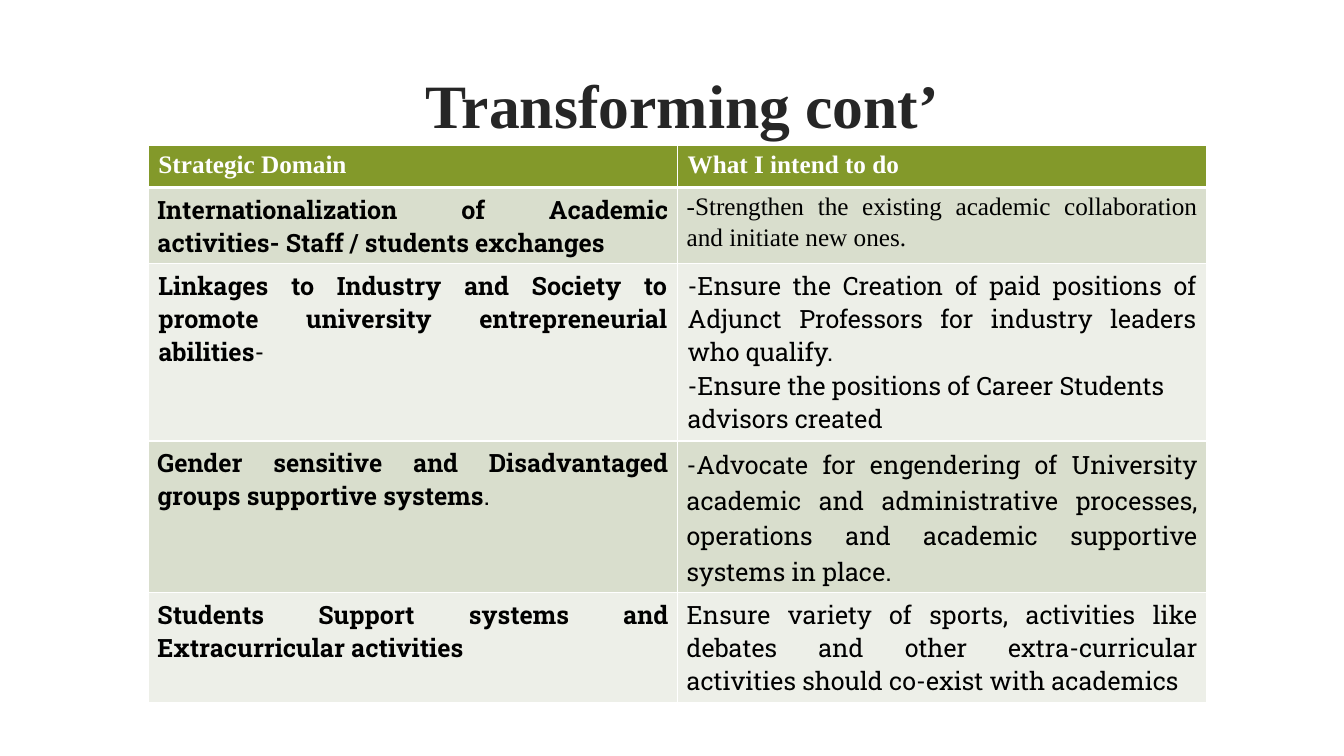
from lxml import etree
from pptx import Presentation
from pptx.dml.color import RGBColor
from pptx.enum.text import MSO_ANCHOR, PP_ALIGN
from pptx.oxml.ns import qn
from pptx.util import Pt

LEFT, CENTER, JUSTIFY = PP_ALIGN.LEFT, PP_ALIGN.CENTER, PP_ALIGN.JUSTIFY
MIDDLE = MSO_ANCHOR.MIDDLE
SERIF, SLAB = "Times New Roman", "Roboto Slab"
WHITE, BLACK, TITLE_COLOR = "FFFFFF", "000000", "262626"
HEADER_FILL, BANDS = "83992A", ("D9DECD", "EDEFE8")

TITLE = "Transforming cont’"
HEADERS = ("Strategic Domain", "What I intend to do")
# Bold domain, its plain ending, font of the actions, actions as (text, alignment)
DOMAINS = [
    ("Internationalization of Academic activities- Staff / students exchanges", "", SERIF,
     [("-Strengthen the existing academic collaboration and initiate new ones.", JUSTIFY)]),
    ("Linkages to Industry and Society to promote university entrepreneurial abilities", "- ", SLAB,
     [("-Ensure the Creation of paid positions of Adjunct Professors for industry leaders "
       "who qualify.", JUSTIFY),
      ("-Ensure the positions of Career Students advisors created", LEFT)]),
    ("Gender sensitive and Disadvantaged groups supportive systems", ". ", SLAB,
     [("-Advocate for engendering of University academic and administrative processes, "
       "operations and academic supportive systems in place.", JUSTIFY)]),
    ("Students Support systems and Extracurricular activities", "", SLAB,
     [("Ensure variety of sports, activities like debates and other extra-curricular "
       "activities should co-exist with academics", JUSTIFY)]),
]
ROW_HEIGHTS = (30, 54.5, 126.5, 108.5, 78.5)
SIDE_MARGINS = (7.2, 6.5, 7.2, 6.5, 6.5)
COL_WIDTH = 378
LOOSE_ROW = 3


def rgb(value):
    return RGBColor.from_string(value)


def add_run(p, text, font=SLAB, size=18, color=BLACK, bold=False):
    r = p.add_run()
    r.text = text
    r.font.name, r.font.size, r.font.bold = font, Pt(size), bold
    r.font.color.rgb = rgb(color)


def style_cell(cell, fill, margin, top=1, bottom=1):
    """Set margins, white borders and fill; borders must precede the fill."""
    cell.margin_left = cell.margin_right = Pt(margin)
    cell.margin_top = cell.margin_bottom = Pt(3.6)
    tc_pr = cell._tc.get_or_add_tcPr()
    for side, width in (("L", 1), ("R", 1), ("T", top), ("B", bottom)):
        ln = etree.SubElement(tc_pr, qn(f"a:ln{side}"), w=str(Pt(width)))
        solid = etree.SubElement(ln, qn("a:solidFill"))
        etree.SubElement(solid, qn("a:srgbClr"), val=WHITE)
    cell.fill.solid()
    cell.fill.fore_color.rgb = rgb(fill)


prs = Presentation()
prs.slide_width, prs.slide_height = Pt(960), Pt(540)
slide = prs.slides.add_slide(prs.slide_layouts[6])

tf = slide.shapes.add_textbox(Pt(109.5), Pt(23), Pt(756), Pt(103)).text_frame
tf.word_wrap = True
tf.vertical_anchor = MIDDLE
tf.paragraphs[0].alignment = CENTER
add_run(tf.paragraphs[0], TITLE, SERIF, 44, TITLE_COLOR, True)

table = slide.shapes.add_table(len(ROW_HEIGHTS), len(HEADERS), Pt(106), Pt(104),
                               Pt(COL_WIDTH * len(HEADERS)), Pt(sum(ROW_HEIGHTS))).table
for col in table.columns:
    col.width = Pt(COL_WIDTH)
for row, height in zip(table.rows, ROW_HEIGHTS):
    row.height = Pt(height)

for c, header in enumerate(HEADERS):
    cell = table.cell(0, c)
    style_cell(cell, HEADER_FILL, SIDE_MARGINS[0], bottom=3)
    add_run(cell.text_frame.paragraphs[0], header, SERIF, color=WHITE, bold=True)

for i, (domain, ending, font, actions) in enumerate(DOMAINS, 1):
    domain_cell, action_cell = table.cell(i, 0), table.cell(i, 1)
    for cell in (domain_cell, action_cell):
        style_cell(cell, BANDS[(i - 1) % 2], SIDE_MARGINS[i], top=3 if i == 1 else 1)

    p = domain_cell.text_frame.paragraphs[0]
    p.alignment = JUSTIFY
    add_run(p, domain, bold=True)
    if ending:
        add_run(p, ending)

    tf = action_cell.text_frame
    for n, (text, align) in enumerate(actions):
        p = tf.add_paragraph() if n else tf.paragraphs[0]
        p.alignment = align
        if i == LOOSE_ROW:
            p.line_spacing, p.space_after = 1.07, Pt(8)
        add_run(p, text, font)
        if font == SERIF:
            add_run(p, " ")  # the taller slab space opens up the last line

prs.save("out.pptx")
